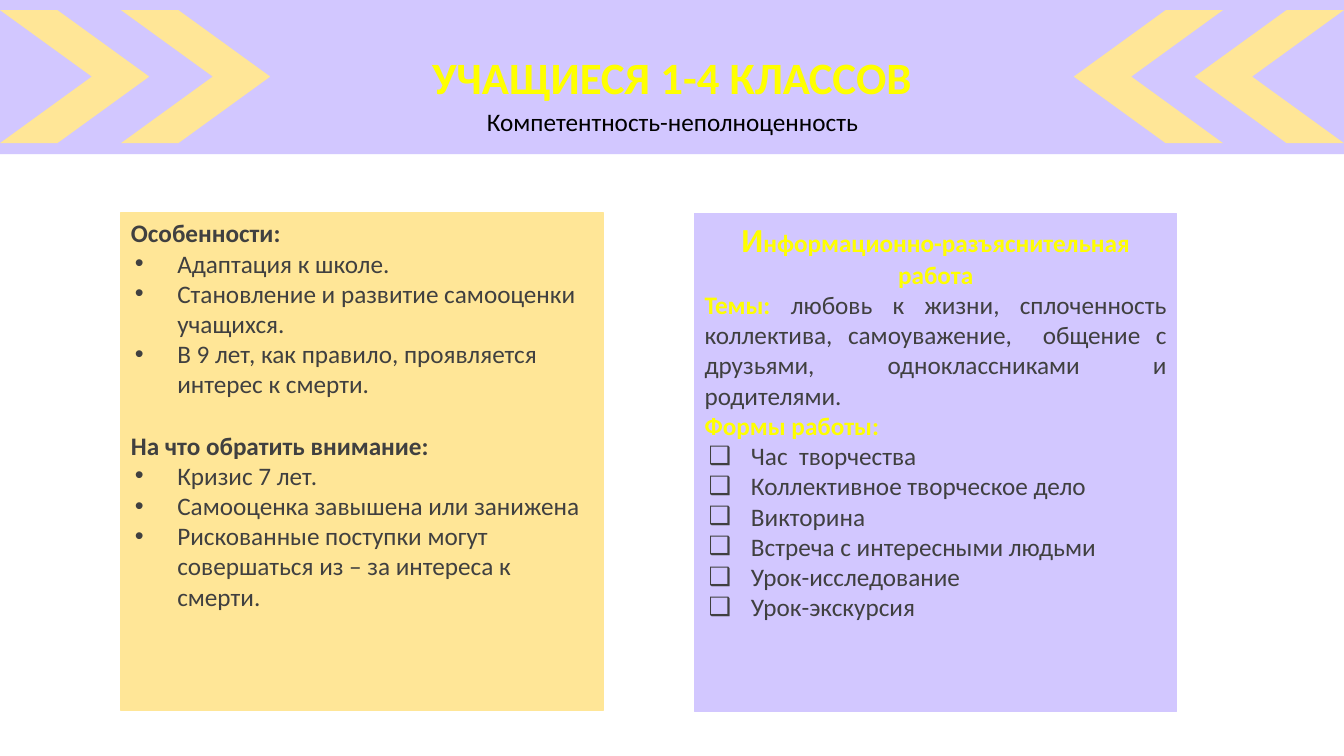
from lxml.etree import SubElement
from pptx import Presentation
from pptx.dml.color import RGBColor
from pptx.enum.shapes import MSO_SHAPE
from pptx.enum.text import MSO_ANCHOR, MSO_AUTO_SIZE, PP_ALIGN
from pptx.oxml.ns import qn
from pptx.util import Inches, Pt

COLORS = {
    "banner": "B6A4FF",
    "sand": "FFE697",
    "lilac": "D2C7FF",
    "yellow": "FFFF00",
    "grey": "404040",
    "black": "000000",
}
FONT = "Calibri"
CENTER, JUSTIFY = PP_ALIGN.CENTER, PP_ALIGN.JUSTIFY
GREY = {"color": "grey"}
GREY_BOLD = {"color": "grey", "bold": True}
YELLOW_BOLD = {"color": "yellow", "bold": True}

# Paragraphs are (spans, format); each span is (text, font format)
FEATURES = [
    ([("Особенности:", GREY_BOLD)], {}),
    ([("Адаптация к школе.", GREY)], {"bullet": "•"}),
    ([("Становление и развитие самооценки учащихся.", GREY)], {"bullet": "•"}),
    ([("В 9 лет, как правило, проявляется интерес к смерти.", GREY)], {"bullet": "•"}),
    ([("На что обратить внимание:", GREY_BOLD)], {"space_before": Pt(22)}),
    ([("Кризис 7 лет.", GREY)], {"bullet": "•"}),
    ([("Самооценка завышена или занижена", GREY)], {"bullet": "•"}),
    ([("Рискованные поступки могут совершаться из – за интереса к смерти.", GREY)],
     {"bullet": "•"}),
]
WORK_FORMS = ["Час  творчества", "Коллективное творческое дело", "Викторина",
              "Встреча с интересными людьми", "Урок-исследование", "Урок-экскурсия"]
OUTREACH = [
    ([("И", {**YELLOW_BOLD, "size": 24}),
      ("нформационно-разъяснительная работа", YELLOW_BOLD)], {"alignment": CENTER}),
    ([("Темы: ", YELLOW_BOLD),
      ("любовь к жизни, сплоченность коллектива, самоуважение,  общение с друзьями, "
       "одноклассниками и родителями.", GREY)], {"alignment": JUSTIFY}),
    ([("Формы работы:", YELLOW_BOLD)], {"alignment": JUSTIFY}),
    *[([(form, GREY)], {"bullet": "❑"}) for form in WORK_FORMS],
]


def rgb(name):
    return RGBColor.from_string(COLORS[name])


def add_bullet(para, symbol):
    properties = para._p.get_or_add_pPr()
    properties.set("marL", str(Inches(0.46)))
    properties.set("indent", str(Inches(-0.42)))
    SubElement(properties, qn("a:buFont")).set("typeface", "Arial")
    SubElement(properties, qn("a:buChar")).set("char", symbol)


def write(frame, paragraphs):
    frame.word_wrap = True
    frame.vertical_anchor = MSO_ANCHOR.TOP
    for index, (spans, para_format) in enumerate(paragraphs):
        para = frame.add_paragraph() if index else frame.paragraphs[0]
        settings = {"alignment": PP_ALIGN.LEFT, **para_format}
        symbol = settings.pop("bullet", None)
        for name, value in settings.items():
            setattr(para, name, value)
        if symbol:
            add_bullet(para, symbol)
        for text, look in spans:
            span = para.add_run()
            span.text = text
            font = {"name": FONT, "size": Pt(look.get("size", 18)),
                    "bold": look.get("bold", False)}
            for name, value in font.items():
                setattr(span.font, name, value)
            span.font.color.rgb = rgb(look["color"])


def place(shape, box):
    for name, value in zip(("left", "top", "width", "height"), box):
        setattr(shape, name, Inches(value))


def add_block(page, kind, box, color):
    shape = page.shapes.add_shape(kind, *map(Inches, box))
    shape.shadow.inherit = False
    shape.fill.solid()
    shape.fill.fore_color.rgb = rgb(color)
    shape.line.fill.background()
    return shape


def add_banner(page, box):
    left, top, width, height = box
    # Translucent strip
    strip = add_block(page, MSO_SHAPE.RECTANGLE, box, "banner")
    tint = strip._element.spPr.find(".//" + qn("a:srgbClr"))
    SubElement(tint, qn("a:alpha")).set("val", "61000")

    # Title, brought in front of the strip
    title = page.shapes.title
    page.shapes._spTree.append(title._element)
    place(title, (left + 2.68, top + 0.44, 7.97, 0.64))
    title.text_frame.auto_size = MSO_AUTO_SIZE.NONE
    write(title.text_frame, [
        ([("УЧАЩИЕСЯ 1-4 КЛАССОВ", {**YELLOW_BOLD, "size": 32})], {"alignment": CENTER})])

    # Chevron pairs pointing inwards from both ends
    chevron_width, step = 1.48, 1.2
    for index in range(2):
        offset = index * step
        for x, flipped in ((left + offset, False),
                           (left + width - chevron_width - offset, True)):
            chevron = add_block(page, MSO_SHAPE.CHEVRON,
                                (x, top + 0.1, chevron_width, height - 0.21), "sand")
            chevron.adjustments[0] = 0.69
            if flipped:
                chevron._element.spPr.xfrm.set("flipH", "1")

    # Subtitle
    subtitle = page.shapes.add_textbox(
        *map(Inches, (left + 4.38, top + 1.01, 4.58, 0.4)))
    write(subtitle.text_frame, [
        ([("Компетентность-неполноценность", {"color": "black"})], {"alignment": CENTER})])


def add_panel(page, box, color, paragraphs):
    panel = add_block(page, MSO_SHAPE.RECTANGLE, box, color)
    panel.line.color.rgb = rgb(color)
    panel.line.width = Pt(1)
    write(panel.text_frame, paragraphs)


def main():
    deck = Presentation()
    deck.slide_width, deck.slide_height = Inches(13.33), Inches(7.5)
    page = deck.slides.add_slide(deck.slide_layouts[5])
    add_banner(page, (0, 0, 13.33, 1.53))
    add_panel(page, (1.2, 2.11, 4.78, 4.94), "sand", FEATURES)
    add_panel(page, (6.89, 2.12, 4.78, 4.94), "lilac", OUTREACH)
    deck.save("out.pptx")


if __name__ == "__main__":
    main()
